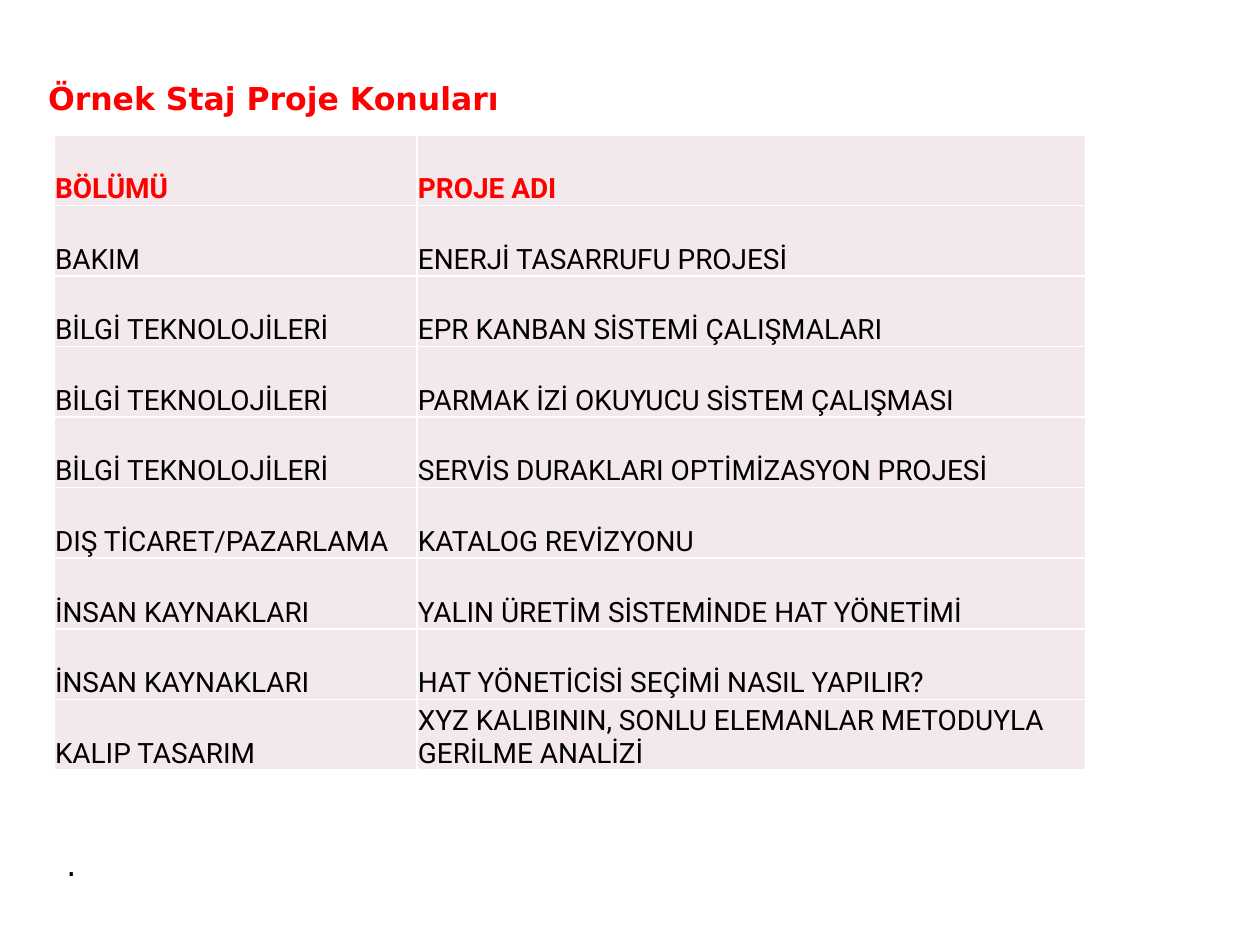
from pptx import Presentation as Deck
from pptx.dml.color import RGBColor as Rgb
from pptx.enum.text import MSO_ANCHOR as Anchor, MSO_AUTO_SIZE as Fit, PP_ALIGN as Align
from pptx.oxml import parse_xml
from pptx.oxml.ns import nsdecls
from pptx.util import Pt

THEME = {
    "red": Rgb.from_string("FF0000"),
    "black": Rgb.from_string("000000"),
    "pink": Rgb.from_string("F3E8EB"),
    "line": "FFFFFF",
    "rule": Pt(1),
    "big": Pt(18),
    "small": Pt(16),
    "head": "DejaVu Sans",
    "body": "Roboto",
}
ROWS = [
    ("BÖLÜMÜ", "PROJE ADI"),
    ("BAKIM", "ENERJİ TASARRUFU PROJESİ"),
    ("BİLGİ TEKNOLOJİLERİ", "EPR KANBAN SİSTEMİ ÇALIŞMALARI"),
    ("BİLGİ TEKNOLOJİLERİ", "PARMAK İZİ OKUYUCU SİSTEM ÇALIŞMASI"),
    ("BİLGİ TEKNOLOJİLERİ", "SERVİS DURAKLARI OPTİMİZASYON PROJESİ"),
    ("DIŞ TİCARET/PAZARLAMA", "KATALOG REVİZYONU"),
    ("İNSAN KAYNAKLARI", "YALIN ÜRETİM SİSTEMİNDE HAT YÖNETİMİ"),
    ("İNSAN KAYNAKLARI", "HAT YÖNETİCİSİ SEÇİMİ NASIL YAPILIR?"),
    ("KALIP TASARIM", "XYZ KALIBININ, SONLU ELEMANLAR METODUYLA GERİLME ANALİZİ"),
]
COLS = (363, 669)
HIGH = 635  # table height


def px(n):
    return round(n * 914400 / 126)


def write(frame, text, face, size, color, bold=False):
    frame.word_wrap = True
    para = frame.paragraphs[0]
    para.text = text
    para.alignment = Align.LEFT
    look = {"name": THEME[face], "size": THEME[size], "bold": bold}
    font = para.runs[0].font
    for key, val in look.items():
        setattr(font, key, val)
    font.color.rgb = THEME[color]
    return para


deck = Deck()
deck.slide_width, deck.slide_height = px(1260), px(945)
slide = deck.slides.add_slide(deck.slide_layouts[5])

# Title
title = slide.shapes.title
spot = {"left": 35, "top": 35, "width": 1201, "height": 127}
for key, val in spot.items():
    setattr(title, key, px(val))
frame = title.text_frame
frame.auto_size = Fit.NONE
frame.vertical_anchor = Anchor.TOP
pad = {"margin_left": 13, "margin_right": 13, "margin_top": 6, "margin_bottom": 6}
for key, val in pad.items():
    setattr(frame, key, px(val))
para = write(frame, "Örnek Staj Proje Konuları", "head", "big", "red", True)
para.line_spacing = 2.0
para.space_before = Pt(0)

# Project table
grid = slide.shapes.add_table(
    len(ROWS), len(COLS), px(54), px(135), px(sum(COLS)), px(HIGH)).table
grid.horz_banding = False
for col, wide in zip(grid.columns, COLS):
    col.width = px(wide)
for row in grid.rows:
    row.height = px(HIGH / len(ROWS))

form = {"margin_left": px(1), "margin_right": px(1), "margin_top": px(1),
        "margin_bottom": 0, "vertical_anchor": Anchor.BOTTOM}
for r, words in enumerate(ROWS):
    for c, text in enumerate(words):
        cell = grid.cell(r, c)
        for key, val in form.items():
            setattr(cell, key, val)
        write(cell.text_frame, text, "body", "small",
              "black" if r else "red", r == 0)
        # Borders go before the fill
        props = cell._tc.get_or_add_tcPr()
        for side in ("lnL", "lnR", "lnT", "lnB"):
            props.append(parse_xml(
                f'<a:{side} {nsdecls("a")} w="{THEME["rule"]}"><a:solidFill>'
                f'<a:srgbClr val="{THEME["line"]}"/></a:solidFill></a:{side}>'))
        cell.fill.solid()
        cell.fill.fore_color.rgb = THEME["pink"]

# Closing dot
dot = slide.shapes.add_textbox(px(54), px(839), px(1111), px(50))
write(dot.text_frame, ".", "head", "big", "black")

deck.save("out.pptx")
